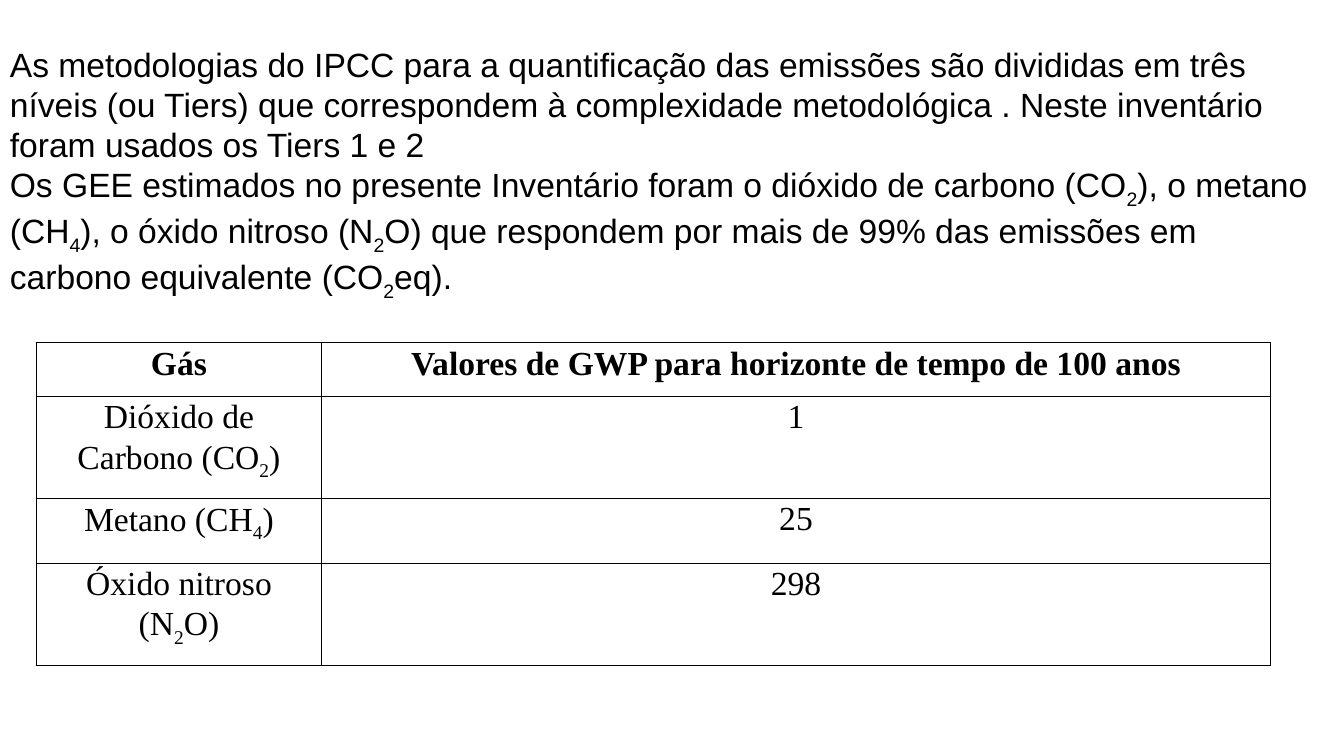
import pptx
import pptx.dml.color
import pptx.enum.text
import pptx.oxml
import pptx.oxml.ns
import pptx.util
from pptx.util import Cm


def color(hex_string):
    return pptx.dml.color.RGBColor.from_string(hex_string)


class SlideBuilder:
    ink = "000000"
    body_font = "Arial"
    table_font = "Times New Roman"
    text_size = pptx.util.Pt(24)
    border_width = pptx.util.Pt(1)

    def __init__(self, slide):
        self.slide = slide

    def fill_paragraph(self, paragraph, text, font_name, bold=False):
        """Add text in which ~2~ stands for a subscript 2."""
        font = paragraph.font
        font.name, font.size, font.bold = font_name, self.text_size, bold
        font.color.rgb = color(self.ink)
        for index, part in enumerate(text.split("~")):
            run = paragraph.add_run()
            run.text = part
            if index % 2:
                run.font._element.set("baseline", "-25000")

    def add_text(self, left, top, width, height, texts):
        frame = self.slide.shapes.add_textbox(left, top, width, height).text_frame
        frame.word_wrap = True
        for index, text in enumerate(texts):
            paragraph = frame.add_paragraph() if index else frame.paragraphs[0]
            self.fill_paragraph(paragraph, text, self.body_font)

    def add_borders(self, cell):
        properties = cell._tc.get_or_add_tcPr()
        namespace = pptx.oxml.ns.nsdecls("a")
        for side in "LRTB":
            properties.append(pptx.oxml.parse_xml(
                f'<a:ln{side} {namespace} w="{self.border_width}"><a:solidFill>'
                f'<a:srgbClr val="{self.ink}"/></a:solidFill></a:ln{side}>'))

    def add_table(self, left, top, column_widths, row_heights, rows):
        table = self.slide.shapes.add_table(
            len(rows), len(column_widths), left, top,
            sum(column_widths), sum(row_heights)).table
        table.first_row = table.horz_banding = False
        for column, width in zip(table.columns, column_widths):
            column.width = width
        for row, height in zip(table.rows, row_heights):
            row.height = height
        for row_index, texts in enumerate(rows):
            for column_index, text in enumerate(texts):
                cell = table.cell(row_index, column_index)
                cell.margin_left = cell.margin_right = Cm(0.18)
                cell.margin_top = cell.margin_bottom = 0
                self.add_borders(cell)
                cell.fill.background()
                paragraph = cell.text_frame.paragraphs[0]
                paragraph.alignment = pptx.enum.text.PP_ALIGN.CENTER
                paragraph.line_spacing = 1.07
                self.fill_paragraph(paragraph, text, self.table_font, bold=row_index == 0)


def main():
    presentation = pptx.Presentation()
    presentation.slide_width, presentation.slide_height = Cm(33.87), Cm(19.05)
    builder = SlideBuilder(presentation.slides.add_slide(presentation.slide_layouts[6]))

    # Methodology
    builder.add_text(Cm(0), Cm(0.97), Cm(33.5), Cm(6.45), [
        "As metodologias do IPCC para a quantificação das emissões são divididas em "
        "três níveis (ou Tiers) que correspondem à complexidade metodológica . Neste "
        "inventário foram usados os Tiers 1 e 2",
        "Os GEE estimados no presente Inventário foram o dióxido de carbono (CO~2~), "
        "o metano (CH~4~), o óxido nitroso (N~2~O) que respondem por mais de 99% das "
        "emissões em carbono equivalente (CO~2~eq).",
    ])

    # Warming potential of each gas
    builder.add_table(
        Cm(0.91), Cm(8.64), [Cm(7.2), Cm(23.9)],
        [Cm(1.35), Cm(2.57), Cm(1.63), Cm(2.57)], [
            ("Gás", "Valores de GWP para horizonte de tempo de 100 anos"),
            ("Dióxido de Carbono (CO~2~)", "1"),
            ("Metano (CH~4~)", "25"),
            ("Óxido nitroso (N~2~O)", "298"),
        ])

    presentation.save("out.pptx")


if __name__ == "__main__":
    main()
